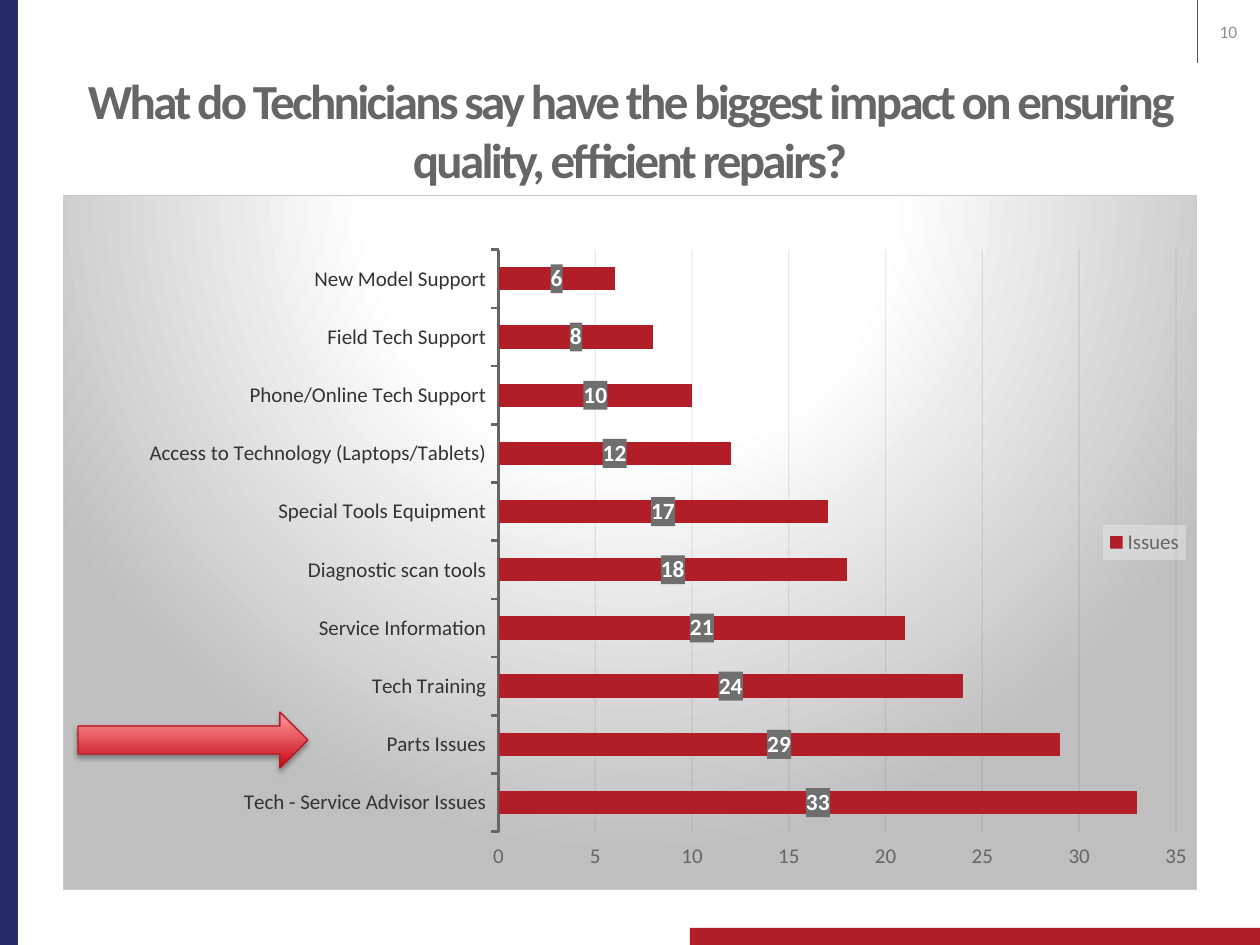
from lxml import etree
from pptx import Presentation
from pptx.chart.data import CategoryChartData
from pptx.dml.color import RGBColor
from pptx.enum.chart import XL_CHART_TYPE, XL_LABEL_POSITION, XL_LEGEND_POSITION, XL_TICK_MARK
from pptx.enum.shapes import MSO_CONNECTOR, MSO_SHAPE
from pptx.enum.text import MSO_ANCHOR, PP_ALIGN
from pptx.oxml import parse_xml
from pptx.oxml.ns import qn
from pptx.util import Pt

# Content
TITLE = "What do Technicians say have the biggest impact on ensuring quality, efficient repairs?"
PAGE_NUMBER = "10"
SERIES_NAME = "Issues"
ISSUES = [
    ("Tech - Service Advisor Issues", 33),
    ("Parts Issues", 29),
    ("Tech Training", 24),
    ("Service Information", 21),
    ("Diagnostic scan tools", 18),
    ("Special Tools Equipment", 17),
    ("Access to Technology (Laptops/Tablets)", 12),
    ("Phone/Online Tech Support", 10),
    ("Field Tech Support", 8),
    ("New Model Support", 6),
]

# Style
FONT = "Calibri"
NAVY = RGBColor(0x24, 0x2D, 0x69)
RED = RGBColor(0xB2, 0x1E, 0x28)
ARROW_EDGE = RGBColor(0xB2, 0x1A, 0x24)
GRAY = RGBColor(0x67, 0x65, 0x65)
DARK = RGBColor(0x34, 0x33, 0x33)
RULE = RGBColor(0x52, 0x52, 0x52)
PAGE_GRAY = RGBColor(0x90, 0x90, 0x90)
WHITE = RGBColor(0xFF, 0xFF, 0xFF)
CENTER = PP_ALIGN.CENTER
MIDDLE = MSO_ANCHOR.MIDDLE

EMU_PER_PX = 914400 // 126
A_NS = 'xmlns:a="http://schemas.openxmlformats.org/drawingml/2006/main"'
C_NS = 'xmlns:c="http://schemas.openxmlformats.org/drawingml/2006/chart"'


def px(*lengths):
    return [round(length * EMU_PER_PX) for length in lengths]


def gradient(stops, direction):
    marks = "".join(f'<a:gs pos="{pos * 1000}"><a:srgbClr val="{color}"/></a:gs>'
                    for pos, color in stops)
    return f'<a:gradFill {A_NS} rotWithShape="1"><a:gsLst>{marks}</a:gsLst>{direction}</a:gradFill>'


def solid(color, alpha=100):
    return (f'<a:solidFill {A_NS}><a:srgbClr val="{color}">'
            f'<a:alpha val="{alpha * 1000}"/></a:srgbClr></a:solidFill>')


def chart_fill(fill, line=""):
    return parse_xml(f'<c:spPr {C_NS} {A_NS}>{fill}{line}</c:spPr>')


def style_font(font, size, color, bold=False):
    font.name, font.size, font.bold = FONT, Pt(size), bold
    font.color.rgb = color


def add_bar(slide, color, *box):
    bar = slide.shapes.add_shape(MSO_SHAPE.RECTANGLE, *px(*box))
    bar.shadow.inherit = False
    bar.fill.solid()
    bar.fill.fore_color.rgb = color
    bar.line.fill.background()


def add_text(slide, text, size, color, bold, *box):
    frame = slide.shapes.add_textbox(*px(*box)).text_frame
    frame.word_wrap = True
    frame.vertical_anchor = MIDDLE
    frame.text = text
    paragraph = frame.paragraphs[0]
    paragraph.alignment = CENTER
    run = paragraph.runs[0]
    style_font(run.font, size, color, bold)
    return run


def add_issue_chart(slide, *box):
    data = CategoryChartData()
    data.categories = [name for name, _ in ISSUES]
    data.add_series(SERIES_NAME, [count for _, count in ISSUES])
    chart = slide.shapes.add_chart(XL_CHART_TYPE.BAR_CLUSTERED, *px(*box), data).chart
    style_font(chart.font, 10, DARK)
    chart.has_title = False

    # Bars and their values
    plot = chart.plots[0]
    plot.gap_width = 150
    plot.vary_by_categories = False
    bars = plot.series[0]
    bars.format.fill.solid()
    bars.format.fill.fore_color.rgb = RED
    labels = bars.data_labels
    labels.show_value = True
    labels.position = XL_LABEL_POSITION.CENTER
    style_font(labels.font, 13.3, WHITE, True)
    labels.font._element.getparent().getparent().getparent().addprevious(
        chart_fill(solid("6F6F6F")))

    # Axes
    issue_axis, count_axis = chart.category_axis, chart.value_axis
    for axis, color in ((issue_axis, DARK), (count_axis, GRAY)):
        axis.major_tick_mark = XL_TICK_MARK.OUTSIDE
        axis.minor_tick_mark = XL_TICK_MARK.NONE
        style_font(axis.tick_labels.font, 12, color)
    issue_axis.has_major_gridlines = False
    issue_axis.format.line.color.rgb = GRAY
    issue_axis.format.line.width = Pt(1.5)
    count_axis.minimum_scale, count_axis.maximum_scale, count_axis.major_unit = 0, 35, 5
    count_axis.format.line.fill.background()
    count_axis.has_major_gridlines = True
    grid = count_axis.major_gridlines.format.line
    grid.width = Pt(0.75)
    grid.color.rgb = RGBColor(0x3E, 0x3D, 0x3D)
    grid_color = next(count_axis.major_gridlines._xAx.majorGridlines.iter(qn("a:srgbClr")))
    etree.SubElement(grid_color, qn("a:alpha")).set("val", "10000")

    # Legend
    chart.has_legend = True
    legend = chart.legend
    legend.position = XL_LEGEND_POSITION.RIGHT
    legend.include_in_layout = False
    style_font(legend.font, 12, GRAY)
    legend._element.find(qn("c:txPr")).addprevious(chart_fill(solid("F2F2F2", 39)))

    # Plot position and chart background
    space = chart._chartSpace
    plot_area = space.chart.plotArea
    for layout in plot_area.findall(qn("c:layout")):
        plot_area.remove(layout)
    places = "".join(f'<c:{key} val="{value}"/>' for key, value in (
        ("layoutTarget", "inner"), ("xMode", "edge"), ("yMode", "edge"),
        ("x", 0.384), ("y", 0.078), ("w", 0.598), ("h", 0.839)))
    plot_area.insert(0, parse_xml(
        f'<c:layout {C_NS}><c:manualLayout>{places}</c:manualLayout></c:layout>'))
    glow = gradient([(0, "FFFFFF"), (39, "FFFFFF"), (100, "BFBFBF")],
                    '<a:path path="circle"><a:fillToRect l="50000" t="-80000" '
                    'r="50000" b="180000"/></a:path>')
    space.chart.addnext(chart_fill(glow, f'<a:ln w="9525">{solid("CDCCCC")}</a:ln>'))


def add_pointer(slide, *box):
    arrow = slide.shapes.add_shape(MSO_SHAPE.RIGHT_ARROW, *px(*box))
    arrow.line.color.rgb = ARROW_EDGE
    arrow.line.width = Pt(0.75)
    properties = arrow._element.spPr
    properties.find(qn("a:ln")).addprevious(parse_xml(gradient(
        [(0, "C80815"), (100, "FF9B9D")], '<a:lin ang="16200000" scaled="0"/>')))
    properties.append(parse_xml(
        f'<a:effectLst {A_NS}><a:outerShdw blurRad="{Pt(3.1)}" dist="{Pt(1.8)}" '
        'dir="5400000" rotWithShape="0"><a:srgbClr val="000000"><a:alpha val="35000"/>'
        '</a:srgbClr></a:outerShdw></a:effectLst>'))


def main():
    deck = Presentation()
    deck.slide_width, deck.slide_height = px(1260, 945)
    slide = deck.slides.add_slide(deck.slide_layouts[6])

    # Frame: side bar, foot bar, rule beside the page number
    add_bar(slide, NAVY, 0, 0, 18, 953)
    add_bar(slide, RED, 690, 928, 570, 17)
    rule = slide.shapes.add_connector(MSO_CONNECTOR.STRAIGHT, *px(1197, -1, 1197, 63))
    rule.line.color.rgb = RULE
    rule.line.width = Pt(0.5)
    etree.SubElement(rule._element.spPr, qn("a:effectLst"))

    add_issue_chart(slide, 63, 195, 1134, 695)
    add_text(slide, PAGE_NUMBER, 10, PAGE_GRAY, False, 1197, 0, 63, 63)
    title = add_text(slide, TITLE, 28, GRAY, True, 63, 63, 1134, 132)
    title.font._element.set("spc", "-150")
    add_pointer(slide, 78, 712, 230, 56)

    deck.save("out.pptx")


if __name__ == "__main__":
    main()
